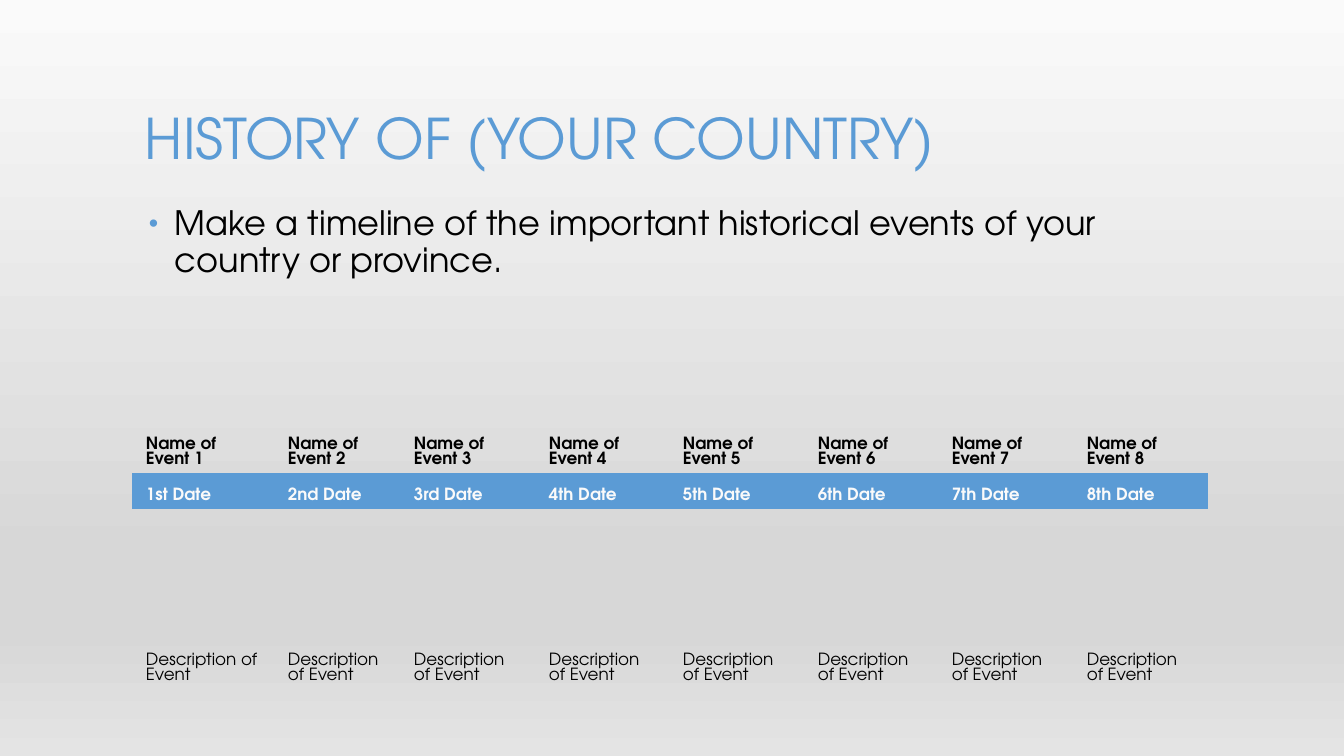
from lxml import etree
from pptx import Presentation
from pptx.dml.color import RGBColor
from pptx.enum.shapes import MSO_SHAPE
from pptx.enum.text import MSO_ANCHOR as Anchor
from pptx.oxml import parse_xml
from pptx.oxml.ns import nsdecls, qn
from pptx.util import Pt

# Content
TITLE = "HISTORY OF (YOUR COUNTRY)"
TASK = "Make a timeline of the important historical events of your country or province."
DATES = ["1st", "2nd", "3rd", "4th", "5th", "6th", "7th", "8th"]
TIMELINE = [
    [f"Name of Event {number}" for number in range(1, len(DATES) + 1)],
    [f"{date} Date" for date in DATES],
    ["Description of Event"] * len(DATES),
]

# Colours and formats
BLUE = RGBColor(0x5B, 0x9B, 0xD5)
BLACK = RGBColor(0, 0, 0)
PALE = RGBColor(0xFA, 0xFA, 0xFA)
GREY = RGBColor(0xD7, 0xD7, 0xD7)
LIGHT_GREY = RGBColor(0xE4, 0xE4, 0xE4)
BACKDROP_STOPS = [(0, PALE), (74, GREY), (83, GREY), (100, LIGHT_GREY)]
FONT = "TeX Gyre Adventor"
ROW_FORMATS = [  # fill, font
    (None, {"size": Pt(12), "bold": True, "color": BLACK}),
    (BLUE, {"size": Pt(12), "bold": True, "color": PALE}),
    (None, {"size": Pt(12), "bold": False, "color": BLACK}),
]
NO_STYLE = "{2D5ABB26-0587-4C30-8999-92F81FD0307C}"

# Geometry in px
SLIDE_WIDTH, SLIDE_HEIGHT = 1344, 756
TITLE_BOX = (135, 31, 1075, 146)
TASK_BOX = (134, 202, 1075, 479)
TASK_INDENT, BULLET_OFFSET = 31, -26
TABLE_LEFT, TABLE_TOP = 132, 376
COLUMN_WIDTHS = [142, 126] + [135, 134] * 2 + [135, 135]
ROW_HEIGHTS = [97, 36, 180]
CELL_MARGINS = {"margin_left": 14, "margin_right": 13, "margin_top": 5, "margin_bottom": 5}


def px(length):
    return round(length * 914400 / 100.8)


def write(frame, text, font_format):
    paragraph = frame.paragraphs[0]
    run = paragraph.add_run()
    run.text = text
    run.font.name = FONT
    for name, value in font_format.items():
        if name == "color":
            run.font.color.rgb = value
        else:
            setattr(run.font, name, value)
    return paragraph


def add_text(slide, box, text, anchor, font_format):
    frame = slide.shapes.add_textbox(*map(px, box)).text_frame
    frame.word_wrap = True
    frame.vertical_anchor = anchor
    paragraph = write(frame, text, font_format)
    paragraph.line_spacing = 0.9
    return paragraph


def add_backdrop(slide):
    shape = slide.shapes.add_shape(MSO_SHAPE.RECTANGLE, 0, 0, px(SLIDE_WIDTH), px(SLIDE_HEIGHT))
    shape.shadow.inherit = False
    shape.line.fill.background()
    shape.fill.gradient()
    shape.fill.gradient_angle = 270
    stops = shape.element.spPr.find(qn("a:gradFill")).find(qn("a:gsLst"))
    for stop in list(stops):
        stops.remove(stop)
    for position, color in BACKDROP_STOPS:
        stop = etree.SubElement(stops, qn("a:gs"), pos=str(position * 1000))
        etree.SubElement(stop, qn("a:srgbClr"), val=str(color))


def add_bullet(paragraph):
    properties = paragraph._p.get_or_add_pPr()
    properties.set("marL", str(px(TASK_INDENT)))
    properties.set("indent", str(px(BULLET_OFFSET)))
    for bullet_part in (
        f'<a:buClr {nsdecls("a")}><a:srgbClr val="{BLUE}"/></a:buClr>',
        f'<a:buSzPct {nsdecls("a")} val="80000"/>',
        f'<a:buFont {nsdecls("a")} typeface="Arial"/>',
        f'<a:buChar {nsdecls("a")} char="•"/>',
    ):
        properties.append(parse_xml(bullet_part))


def add_timeline(slide):
    table = slide.shapes.add_table(
        len(TIMELINE), len(DATES), px(TABLE_LEFT), px(TABLE_TOP),
        px(sum(COLUMN_WIDTHS)), px(sum(ROW_HEIGHTS)),
    ).table
    table.first_row = table.horz_banding = False
    table._tbl.tblPr.find(qn("a:tableStyleId")).text = NO_STYLE
    for column, width in zip(table.columns, COLUMN_WIDTHS):
        column.width = px(width)
    for row, height, texts, row_format in zip(table.rows, ROW_HEIGHTS, TIMELINE, ROW_FORMATS):
        row.height = px(height)
        fill_color, font_format = row_format
        for cell, text in zip(row.cells, texts):
            cell.vertical_anchor = Anchor.BOTTOM
            for name, margin in CELL_MARGINS.items():
                setattr(cell, name, px(margin))
            if fill_color is None:
                cell.fill.background()
            else:
                cell.fill.solid()
                cell.fill.fore_color.rgb = fill_color
            write(cell.text_frame, text, font_format)


def main():
    presentation = Presentation()
    presentation.slide_width = px(SLIDE_WIDTH)
    presentation.slide_height = px(SLIDE_HEIGHT)
    slide = presentation.slides.add_slide(presentation.slide_layouts[6])

    add_backdrop(slide)
    add_timeline(slide)
    # Task and title
    task = add_text(slide, TASK_BOX, TASK, Anchor.TOP, {"size": Pt(24), "color": BLACK})
    add_bullet(task)
    add_text(slide, TITLE_BOX, TITLE, Anchor.BOTTOM, {"size": Pt(40), "color": BLUE})

    presentation.save("out.pptx")


if __name__ == "__main__":
    main()
